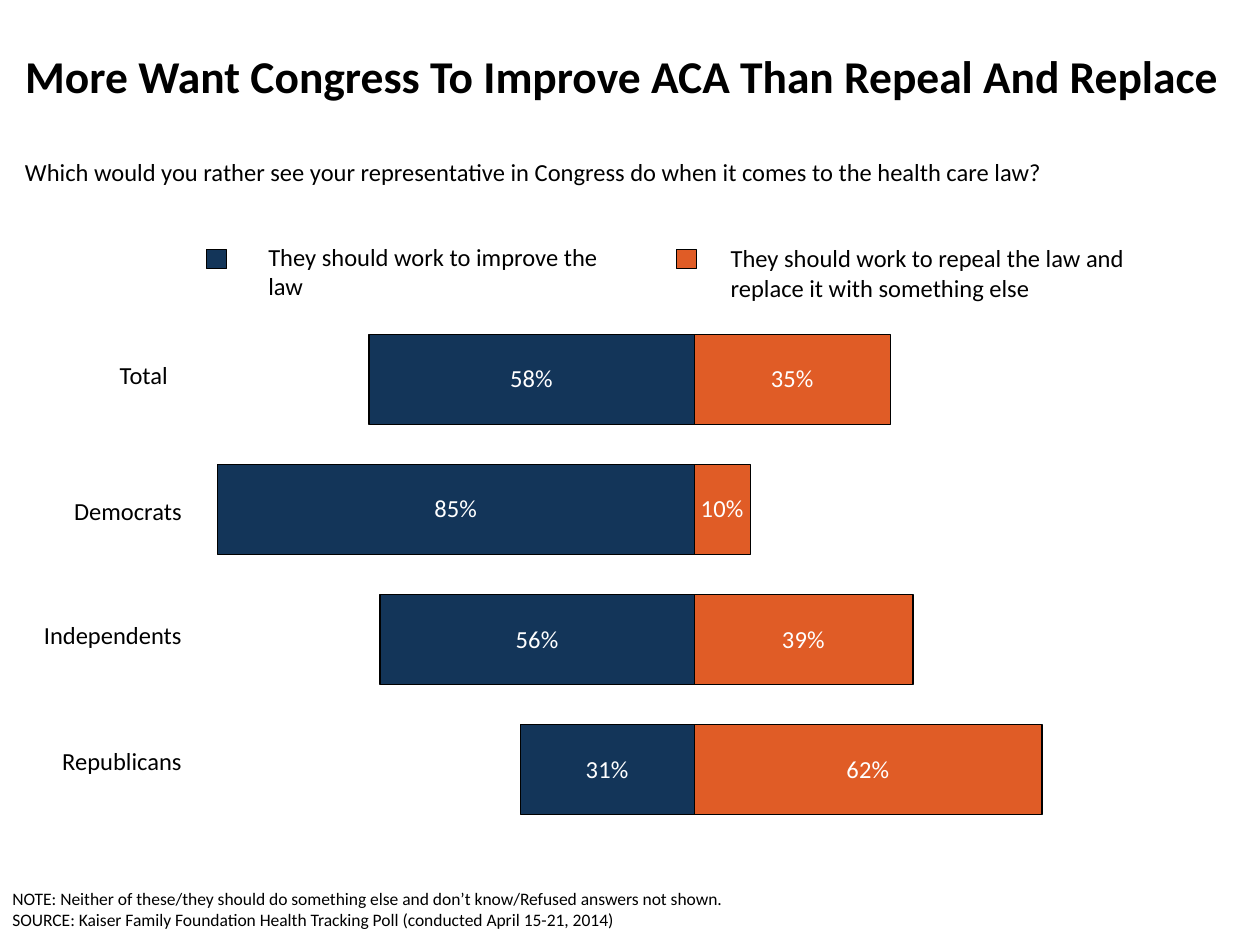
from dataclasses import dataclass

from pptx import Presentation
from pptx.chart.data import CategoryChartData
from pptx.dml.color import RGBColor
from pptx.enum.chart import XL_CHART_TYPE, XL_LABEL_POSITION
from pptx.enum.shapes import MSO_SHAPE
from pptx.enum.text import MSO_ANCHOR, MSO_AUTO_SIZE, PP_ALIGN
from pptx.util import Pt

BAR_STACKED = XL_CHART_TYPE.BAR_STACKED
LABEL_CENTER = XL_LABEL_POSITION.CENTER
RECTANGLE = MSO_SHAPE.RECTANGLE
TOP, MIDDLE = MSO_ANCHOR.TOP, MSO_ANCHOR.MIDDLE
NO_AUTOSIZE = MSO_AUTO_SIZE.NONE
LEFT, RIGHT = PP_ALIGN.LEFT, PP_ALIGN.RIGHT
TITLE_ONLY = 5


@dataclass(frozen=True)
class Theme:
    font: str = "Calibri"
    title: int = 26
    body: int = 14
    note: int = 10
    line: float = 0.75
    black: RGBColor = RGBColor(0x00, 0x00, 0x00)
    white: RGBColor = RGBColor(0xFF, 0xFF, 0xFF)
    improve: RGBColor = RGBColor(0x13, 0x35, 0x59)
    repeal: RGBColor = RGBColor(0xE0, 0x5C, 0x26)


class Deck:
    def __init__(self, theme, width, height):
        self.theme = theme
        self.prs = Presentation()
        self.prs.slide_width, self.prs.slide_height = Pt(width), Pt(height)
        self.slide = None

    def add_slide(self):
        self.slide = self.prs.slides.add_slide(self.prs.slide_layouts[TITLE_ONLY])

    def style_font(self, font, size, color, bold=False):
        font.name, font.size, font.bold = self.theme.font, Pt(size), bold
        font.color.rgb = color

    def paint(self, fmt, color):
        fmt.fill.solid()
        fmt.fill.fore_color.rgb = color
        fmt.line.color.rgb = self.theme.black
        fmt.line.width = Pt(self.theme.line)

    def fill_text(self, sp, text, size, bold=False, align=LEFT, anchor=TOP):
        tf = sp.text_frame
        tf.text = text
        tf.word_wrap = True
        tf.auto_size = NO_AUTOSIZE
        tf.vertical_anchor = anchor
        for p in tf.paragraphs:
            p.alignment = align
            for r in p.runs:
                self.style_font(r.font, size, self.theme.black, bold)

    def title(self, text, x, y, w, h):
        sp = self.slide.shapes.title
        sp.left, sp.top, sp.width, sp.height = Pt(x), Pt(y), Pt(w), Pt(h)
        self.fill_text(sp, text, self.theme.title, bold=True, anchor=MIDDLE)

    def text(self, text, x, y, w, h, size=None, align=LEFT):
        sp = self.slide.shapes.add_textbox(Pt(x), Pt(y), Pt(w), Pt(h))
        self.fill_text(sp, text, size or self.theme.body, align=align)

    def swatch(self, x, y, w, h, color):
        sp = self.slide.shapes.add_shape(RECTANGLE, Pt(x), Pt(y), Pt(w), Pt(h))
        sp.shadow.inherit = False
        self.paint(sp, color)

    def diverging_bars(self, categories, series, x, y, w, h):
        data = CategoryChartData(number_format="0%;0%")
        data.categories = categories
        for name, values, _ in series:
            data.add_series(name, values)
        chart = self.slide.shapes.add_chart(
            BAR_STACKED, Pt(x), Pt(y), Pt(w), Pt(h), data).chart
        chart.has_legend = False
        chart.has_title = False
        self.style_font(chart.font, self.theme.body, self.theme.black)
        chart.category_axis.visible = False
        axis = chart.value_axis
        axis.visible = False
        axis.has_major_gridlines = False
        axis.minimum_scale, axis.maximum_scale, axis.major_unit = -1.1, 1.1, 0.1
        plot = chart.plots[0]
        plot.gap_width, plot.overlap = 45, 100
        plot.vary_by_categories = False
        for ser, (_, _, color) in zip(plot.series, series):
            ser.invert_if_negative = False
            self.paint(ser.format, color)
            labels = ser.data_labels
            labels.show_value = True
            labels.number_format = "0%;0%"
            labels.number_format_is_linked = False
            labels.position = LABEL_CENTER
            self.style_font(labels.font, self.theme.body, self.theme.white)


def main():
    theme = Theme()
    deck = Deck(theme, 720, 540)
    deck.add_slide()
    deck.diverging_bars(
        ["1", "2", "3", "4"],
        [("Series 1", [-0.31, -0.56, -0.85, -0.58], theme.improve),
         ("Series 2", [0.62, 0.39, 0.1, 0.35], theme.repeal)],
        29.5, 173.5, 734.4, 309.6)
    deck.title("More Want Congress To Improve ACA Than Repeal And Replace",
               7.2, 7.2, 699, 72)
    deck.text("Which would you rather see your representative in Congress do "
              "when it comes to the health care law?", 7.2, 86.4, 704, 24.5)

    legend = [
        (118, theme.improve, "They should work to improve the law", 146.2, 134.6, 221.8),
        (386.6, theme.repeal, "They should work to repeal the law and replace it "
         "with something else", 410.4, 135.4, 278),
    ]
    for swatch_x, color, text, x, y, w in legend:
        deck.swatch(swatch_x, 142.5, 11.5, 11, color)
        deck.text(text, x, y, w, 41)

    groups = [("Total", 103, 202.3), ("Democrats", 111, 280),
              ("Independents", 111, 350.6), ("Republicans", 111, 422.6)]
    label_width = 103
    for name, right, y in groups:
        deck.text(name, right - label_width, y, label_width, 24.5, align=RIGHT)

    deck.text("NOTE: Neither of these/they should do something else and don’t "
              "know/Refused answers not shown.\n"
              "SOURCE: Kaiser Family Foundation Health Tracking Poll "
              "(conducted April 15-21, 2014)", 0, 504, 682, 32.4, theme.note)
    deck.prs.save("out.pptx")


if __name__ == "__main__":
    main()
